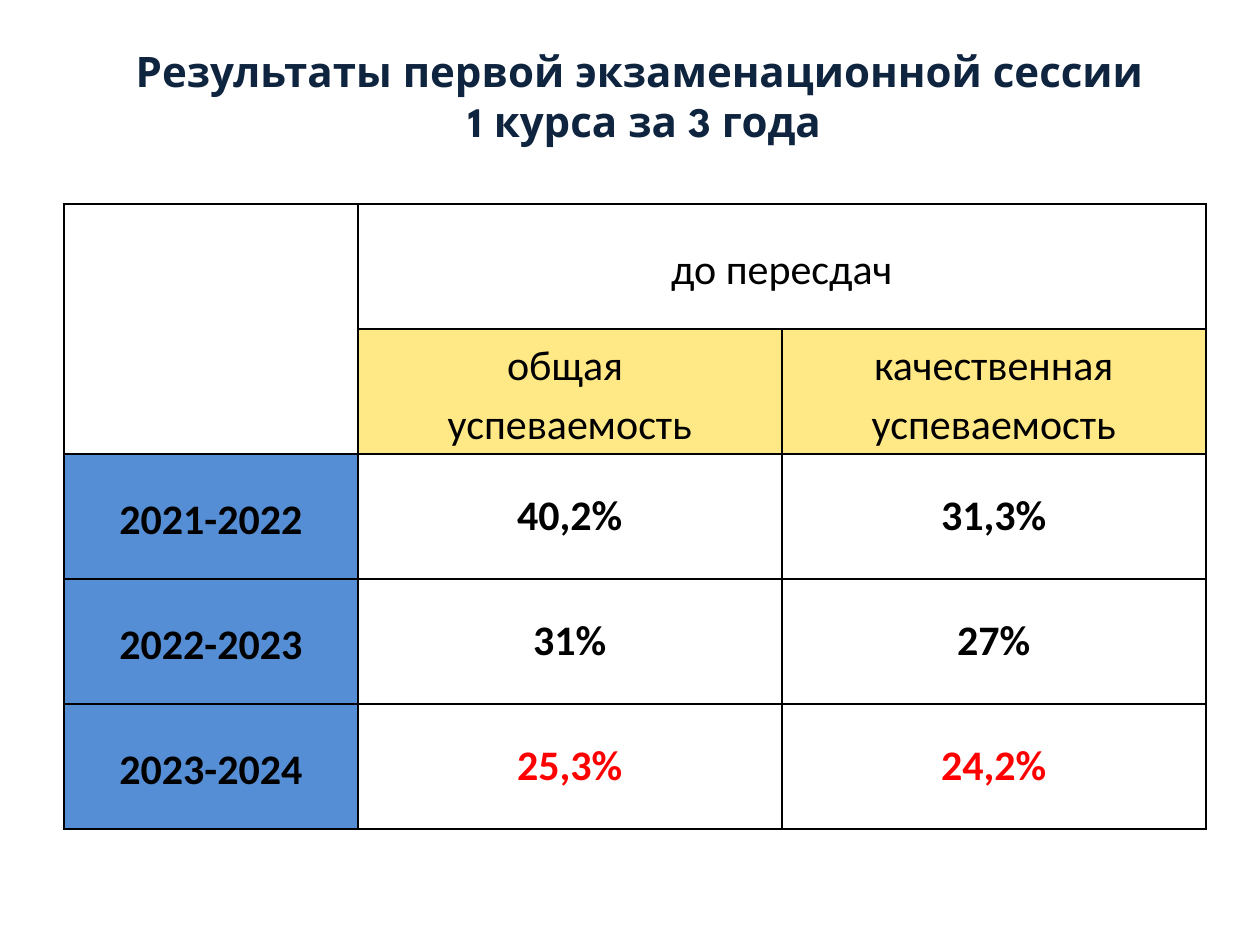
import pptx
import pptx.dml.color
import pptx.enum.text
import pptx.oxml
import pptx.oxml.ns
import pptx.util
from pptx.util import Inches

NAVY, BLACK, RED = "0F243E", "000000", "FF0000"
YELLOW, BLUE = "FFE885", "558ED5"
CENTER = pptx.enum.text.PP_ALIGN.CENTER
MIDDLE = pptx.enum.text.MSO_ANCHOR.MIDDLE
TITLE_LINES = ["Результаты первой экзаменационной сессии ", "1 курса за 3 года"]
RESULTS = [
    ("2021-2022", "40,2%", "31,3%", BLACK),
    ("2022-2023", "31%", "27%", BLACK),
    ("2023-2024", "25,3%", "24,2%", RED),
]


def color(value):
    return pptx.dml.color.RGBColor.from_string(value)


def set_values(target, values):
    for name, value in values.items():
        setattr(target, name, value)


def write_text(text_frame, lines, font, hex_color, bold=True, spacing=None):
    text_frame.text = "\n".join(lines)
    for paragraph in text_frame.paragraphs:
        set_values(paragraph, {"alignment": CENTER, "line_spacing": spacing})
        for run in paragraph.runs:
            set_values(run.font, {"name": font, "size": pptx.util.Pt(24), "bold": bold})
            run.font.color.rgb = color(hex_color)


def set_borders(cell):
    """Outline all four sides; borders must precede the fill in tcPr."""
    properties = cell._tc.get_or_add_tcPr()
    for index, side in enumerate(("lnL", "lnR", "lnT", "lnB")):
        properties.insert(index, pptx.oxml.parse_xml(
            f'<a:{side} {pptx.oxml.ns.nsdecls("a")} w="12700"><a:solidFill>'
            f'<a:srgbClr val="{BLACK}"/></a:solidFill></a:{side}>'))


def fill_cell(cell, lines, fill=None, margin=0.07, **text_format):
    set_values(cell, {
        "vertical_anchor": MIDDLE,
        "margin_left": Inches(margin), "margin_right": Inches(margin),
        "margin_top": 0, "margin_bottom": 0,
    })
    if lines:
        write_text(cell.text_frame, lines, "Calibri",
                   text_format.pop("hex_color", BLACK), **text_format)
    if fill:
        cell.fill.solid()
        cell.fill.fore_color.rgb = color(fill)
    else:
        cell.fill.background()


def place_title(slide, left, top, width, height):
    title = slide.shapes.title
    set_values(title, {"left": left, "top": top, "width": width, "height": height})
    set_values(title.text_frame, {
        "word_wrap": True,
        "auto_size": pptx.enum.text.MSO_AUTO_SIZE.NONE,
        "vertical_anchor": pptx.enum.text.MSO_ANCHOR.TOP,
        "margin_left": Inches(0.1), "margin_right": Inches(0.1),
        "margin_top": Inches(0.15), "margin_bottom": Inches(0.05),
    })
    write_text(title.text_frame, TITLE_LINES, "League Spartan", NAVY)


def place_results_table(slide, left, top, width, height):
    row_count = len(RESULTS) + 2
    table = slide.shapes.add_table(row_count, 3, left, top, width, height).table
    set_values(table, {"first_row": False, "horz_banding": False})
    year_width = Inches(2.33)
    result_width = (width - year_width) // 2
    for column, column_width in zip(table.columns, (year_width, result_width, result_width)):
        column.width = column_width
    for row in table.rows:
        row.height = height // row_count

    header = {"bold": False, "spacing": 1.15}
    fill_cell(table.cell(0, 0), [])
    fill_cell(table.cell(0, 1), ["до пересдач"], **header)
    fill_cell(table.cell(1, 1), ["общая ", "успеваемость"], YELLOW, **header)
    fill_cell(table.cell(1, 2), ["качественная успеваемость"], YELLOW, **header)
    for row_index, (year, overall, quality, hex_color) in enumerate(RESULTS, start=2):
        fill_cell(table.cell(row_index, 0), [year], BLUE, spacing=1.15)
        for column_index, value in enumerate((overall, quality), start=1):
            fill_cell(table.cell(row_index, column_index), [value],
                      margin=0.01, hex_color=hex_color)
    for cell in table.iter_cells():
        set_borders(cell)
    table.cell(0, 0).merge(table.cell(1, 0))
    table.cell(0, 1).merge(table.cell(0, 2))


def main():
    presentation = pptx.Presentation()
    set_values(presentation, {"slide_width": Inches(10), "slide_height": Inches(7.5)})
    slide = presentation.slides.add_slide(presentation.slide_layouts.get_by_name("Title Only"))
    place_title(slide, Inches(0.83), Inches(0.21), Inches(8.58), Inches(1.04))
    place_results_table(slide, Inches(0.51), Inches(1.62), Inches(9.06), Inches(4.96))
    presentation.save("out.pptx")


if __name__ == "__main__":
    main()
